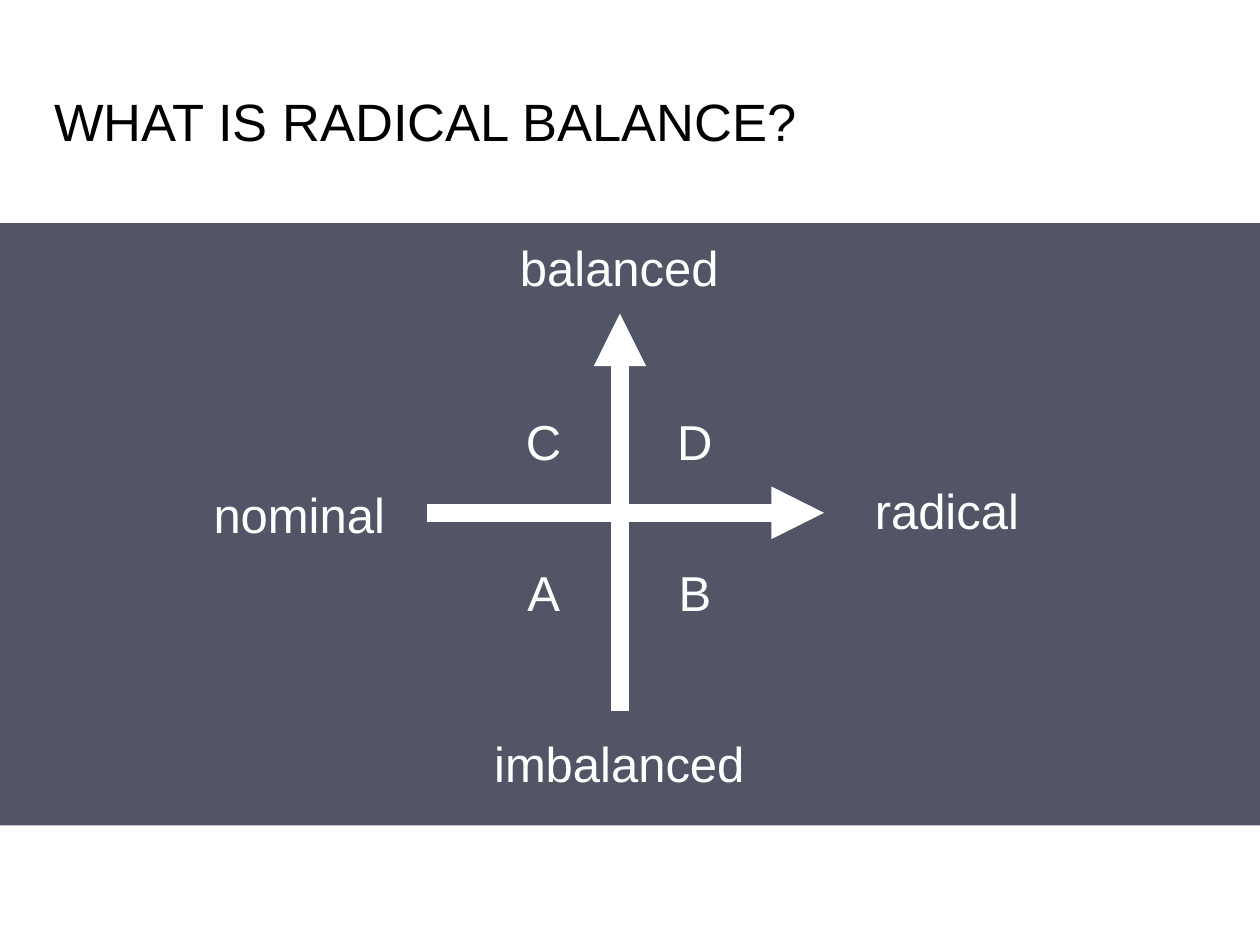
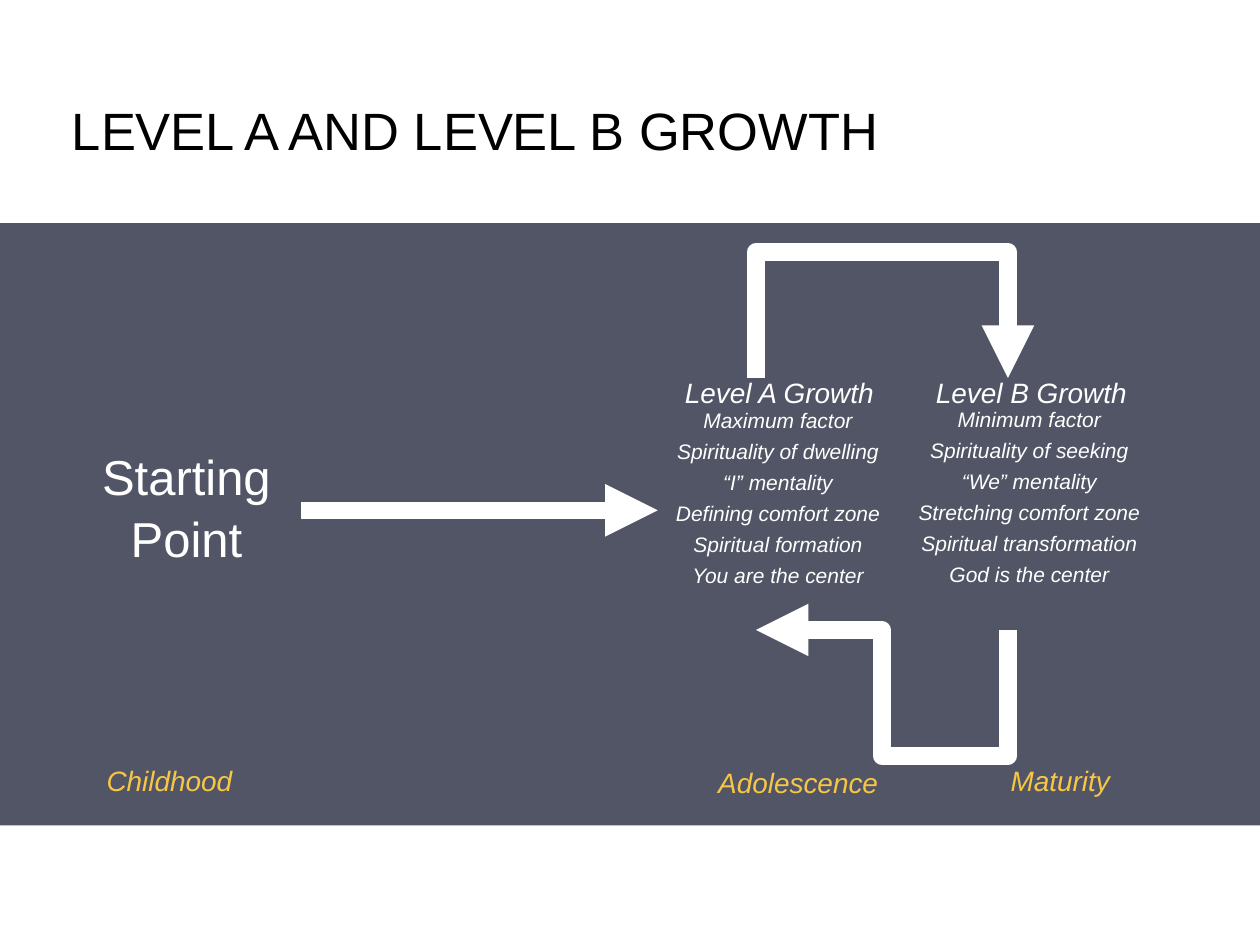
"""Build two slides on radical balance and on Level A and Level B growth."""
import pptx
import pptx.util
import pptx.dml.color
import pptx.enum.shapes
import pptx.enum.text
import pptx.oxml.ns
import lxml.etree

Inches = pptx.util.Inches
Pt = pptx.util.Pt
ANCHOR = pptx.enum.text.MSO_ANCHOR
ALIGN = pptx.enum.text.PP_ALIGN

COLORS = {"band": "525565", "title": "000000", "light": "FFFFFF", "stage": "F6C646"}
FONT = "Arial"
BAND = (-0.07, 1.77, 10.14, 4.78)
TITLE_SIZE = (7.42, 1.25)

AXIS_LABELS = [
    ("nominal", 1.01, 3.77),
    ("radical", 6.15, 3.74),
    ("balanced", 3.55, 1.81),
    ("imbalanced", 3.55, 5.75),
]
AXES = [((3.39, 4.07), (6.54, 4.07)), ((4.92, 5.64), (4.92, 2.49))]
QUADRANTS = ["CD", "AB"]
QUADRANT_START = (4, 3.15)
QUADRANT_STEP = 1.2

STAGES = [("Childhood", -0.19, 6), ("Adolescence", 4.8, 6.01), ("Maturity", 6.88, 6)]
LEVELS = [
    ("Level A Growth", 4.65, (4.85, 3.26, 2.65, 1.6), [
        "Maximum factor", "Spirituality of dwelling", "“I” mentality",
        "Defining comfort zone", "Spiritual formation", "You are the center"]),
    ("Level B Growth", 6.65, (6.93, 3.25, 2.48, 1.6), [
        "Minimum factor", "Spirituality of seeking", "“We” mentality",
        "Stretching comfort zone", "Spiritual transformation", "God is the center"]),
]
CYCLE_CURVE = [(5.99, 2.81), (5.99, 2.81), (6.96, 1.45), (8.46, 2.85)]
CYCLE_MIRROR = (14.49, 7.86)
CURVE_STEPS = 40


def rgb(name):
    return pptx.dml.color.RGBColor.from_string(COLORS[name])


def add_text(page, lines, place, size, color="light", italic=False, align=ALIGN.CENTER,
             anchor=ANCHOR.TOP, inset=0.05, before=0, spacing=1.05):
    box = page.shapes.add_textbox(*map(Inches, place))
    frame = box.text_frame
    frame.word_wrap = True
    frame.vertical_anchor = anchor
    frame.margin_left = frame.margin_right = Inches(inset)
    frame.margin_top = frame.margin_bottom = Inches(inset)
    frame.text = "\n".join(lines)
    for para in frame.paragraphs:
        para.alignment = align
        para.space_before = Pt(before)
        para.line_spacing = spacing
        for span in para.runs:
            span.font.name = FONT
            span.font.size = Pt(size)
            span.font.italic = italic
            span.font.color.rgb = rgb(color)


def add_label(page, text, place, **style):
    add_text(page, [text], place, 28, before=22, **style)


def add_caption(page, text, left, top, color="light"):
    add_text(page, [text], (left, top, 3.07, 0.38), 16, color, italic=True, before=9)


def style_arrow(arrow):
    arrow.line.color.rgb = rgb("light")
    arrow.line.width = Pt(10)
    outline = arrow.line._get_or_add_ln()
    lxml.etree.SubElement(outline, pptx.oxml.ns.qn("a:tailEnd"), type="triangle")


def add_arrow(page, start, end):
    arrow = page.shapes.add_connector(
        pptx.enum.shapes.MSO_CONNECTOR.STRAIGHT, *map(Inches, start + end))
    style_arrow(arrow)
    lxml.etree.SubElement(arrow._element.spPr, pptx.oxml.ns.qn("a:effectLst"))


def curve_point(controls, t):
    weights = ((1 - t) ** 3, 3 * t * (1 - t) ** 2, 3 * t ** 2 * (1 - t), t ** 3)
    return tuple(sum(w * point[axis] for w, point in zip(weights, controls)) for axis in (0, 1))


def add_curved_arrow(page, controls):
    points = [curve_point(controls, step / CURVE_STEPS) for step in range(CURVE_STEPS + 1)]
    builder = page.shapes.build_freeform(*points[0], scale=Inches(1))
    builder.add_line_segments(points[1:], close=False)
    arrow = builder.convert_to_shape()
    arrow.shadow.inherit = False
    arrow.fill.background()
    style_arrow(arrow)


def add_page(deck, title, left, top):
    page = deck.slides.add_slide(deck.slide_layouts[6])
    band = page.shapes.add_shape(
        pptx.enum.shapes.MSO_SHAPE.RECTANGLE, *map(Inches, BAND))
    band.shadow.inherit = False
    band.fill.solid()
    band.fill.fore_color.rgb = rgb("band")
    band.line.fill.background()
    add_text(page, [title], (left, top, *TITLE_SIZE), 30, "title",
             align=ALIGN.LEFT, anchor=ANCHOR.MIDDLE, spacing=1)
    return page


def build_balance(deck):
    page = add_page(deck, "WHAT IS RADICAL BALANCE?", 0.38, 0.33)
    for text, left, top in AXIS_LABELS:
        add_label(page, text, (left, top, 2.73, 0.59))
    for start, end in AXES:
        add_arrow(page, start, end)
    for row, letters in enumerate(QUADRANTS):
        for column, letter in enumerate(letters):
            left = QUADRANT_START[0] + column * QUADRANT_STEP
            top = QUADRANT_START[1] + row * QUADRANT_STEP
            add_label(page, letter, (left, top, 0.63, 0.67), anchor=ANCHOR.MIDDLE, inset=0)


def build_growth(deck):
    page = add_page(deck, "LEVEL A AND LEVEL B GROWTH", 0.52, 0.4)
    add_label(page, "Starting Point", (0.28, 3.47, 2.4, 1.07))
    add_arrow(page, (2.39, 4.05), (5.22, 4.05))
    for text, left, top in STAGES:
        add_caption(page, text, left, top, "stage")
    for heading, left, traits_place, traits in LEVELS:
        add_caption(page, heading, left, 2.92)
        add_text(page, traits, traits_place, 12, italic=True, before=9, spacing=0.6)
    add_curved_arrow(page, CYCLE_CURVE)
    add_curved_arrow(page, [(CYCLE_MIRROR[0] - x, CYCLE_MIRROR[1] - y) for x, y in CYCLE_CURVE])


def main():
    deck = pptx.Presentation()
    deck.slide_width = Inches(10)
    deck.slide_height = Inches(7.5)
    build_balance(deck)
    build_growth(deck)
    deck.save("out.pptx")


if __name__ == "__main__":
    main()
